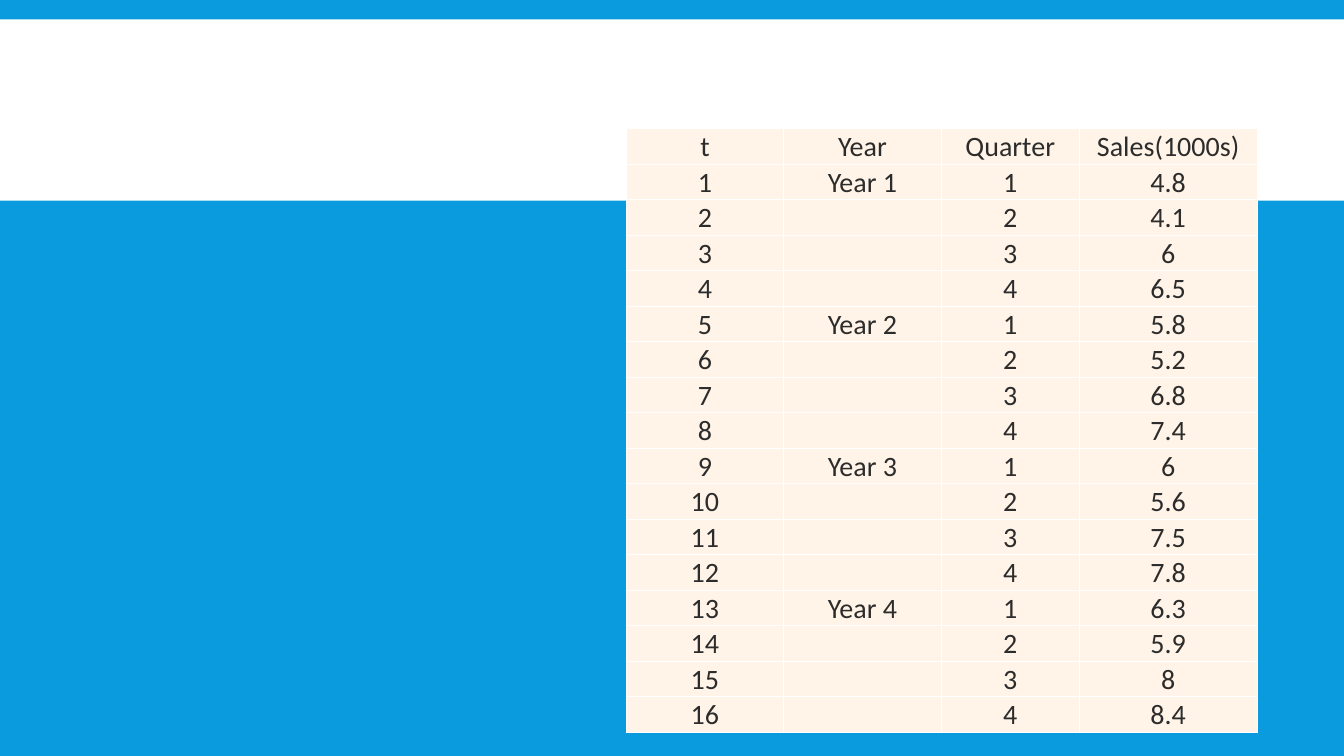
from lxml.etree import SubElement
from pptx import Presentation
from pptx.dml.color import RGBColor
from pptx.enum.shapes import MSO_SHAPE
from pptx.enum.text import MSO_ANCHOR, PP_ALIGN
from pptx.oxml.ns import qn
from pptx.util import Cm, Pt

COLOURS = {"blue": "099BDD", "white": "FFFFFF", "cream": "FFF4E7", "text": "2C2C2C"}
HEADINGS = ["t", "Year", "Quarter", "Sales(1000s)"]
SALES = [
    ["4.8", "4.1", "6", "6.5"],
    ["5.8", "5.2", "6.8", "7.4"],
    ["6", "5.6", "7.5", "7.8"],
    ["6.3", "5.9", "8", "8.4"],
]
COLUMN_WIDTHS = [3.97, 3.97, 3.48, 4.48]
ROW_HEIGHT = 0.89


def colour(name):
    return RGBColor.from_string(COLOURS[name])


def write_text(frame, text, size=20, font="Calibri", fill="text", align=PP_ALIGN.CENTER):
    para = frame.paragraphs[0]
    para.alignment = align
    if text:
        span = para.add_run()
        span.text = text
        span.font.size = Pt(size)
        span.font.name = font
        span.font.color.rgb = colour(fill)


def add_borders(cell, line_colour="white", width=1):
    properties = cell._tc.get_or_add_tcPr()
    for index, side in enumerate(("lnL", "lnR", "lnT", "lnB")):
        line = properties.makeelement(qn(f"a:{side}"), {"w": str(Pt(width))})
        fill = SubElement(line, qn("a:solidFill"))
        SubElement(fill, qn("a:srgbClr"), val=COLOURS[line_colour])
        # Borders come before the cell fill
        properties.insert(index, line)


def add_band(page, left, top, width, height):
    band = page.shapes.add_shape(
        MSO_SHAPE.RECTANGLE, Cm(left), Cm(top), Cm(width), Cm(height))
    band.shadow.inherit = False
    band.fill.solid()
    band.fill.fore_color.rgb = colour("white")
    band.line.fill.background()


def sales_rows():
    rows = [HEADINGS]
    for year, quarters in enumerate(SALES, start=1):
        for quarter, sales in enumerate(quarters, start=1):
            label = f"Year {year}" if quarter == 1 else ""
            rows.append([str(len(rows)), label, str(quarter), sales])
    return rows


def add_sales_table(page, left, top):
    rows = sales_rows()
    table = page.shapes.add_table(
        len(rows), len(HEADINGS), Cm(left), Cm(top),
        Cm(sum(COLUMN_WIDTHS)), Cm(ROW_HEIGHT * len(rows))).table
    table.horz_banding = False
    table.first_row = False
    for column, width in zip(table.columns, COLUMN_WIDTHS):
        column.width = Cm(width)
    for row, values in zip(table.rows, rows):
        row.height = Cm(ROW_HEIGHT)
        for cell, value in zip(row.cells, values):
            cell.margin_left = cell.margin_right = cell.margin_top = Cm(0.03)
            cell.margin_bottom = 0
            cell.vertical_anchor = MSO_ANCHOR.BOTTOM
            cell.fill.solid()
            cell.fill.fore_color.rgb = colour("cream")
            add_borders(cell)
            write_text(cell.text_frame, value)


def main():
    deck = Presentation()
    deck.slide_width, deck.slide_height = Cm(33.87), Cm(19.05)
    # Blank layout, as the slide has no title
    page = deck.slides.add_slide(deck.slide_layouts[6])
    page.background.fill.solid()
    page.background.fill.fore_color.rgb = colour("blue")
    add_band(page, left=0, top=0.49, width=33.87, height=4.57)
    add_sales_table(page, left=15.78, top=3.24)
    deck.save("out.pptx")


if __name__ == "__main__":
    main()
